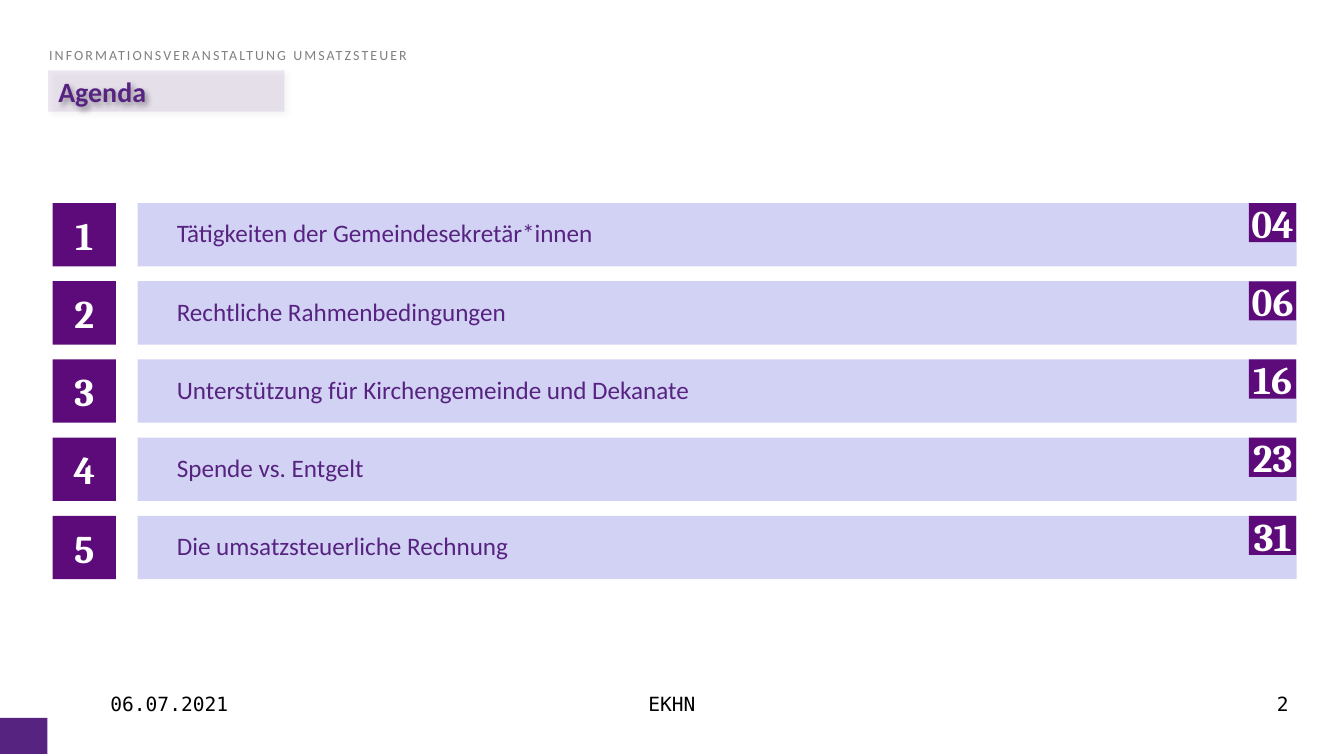
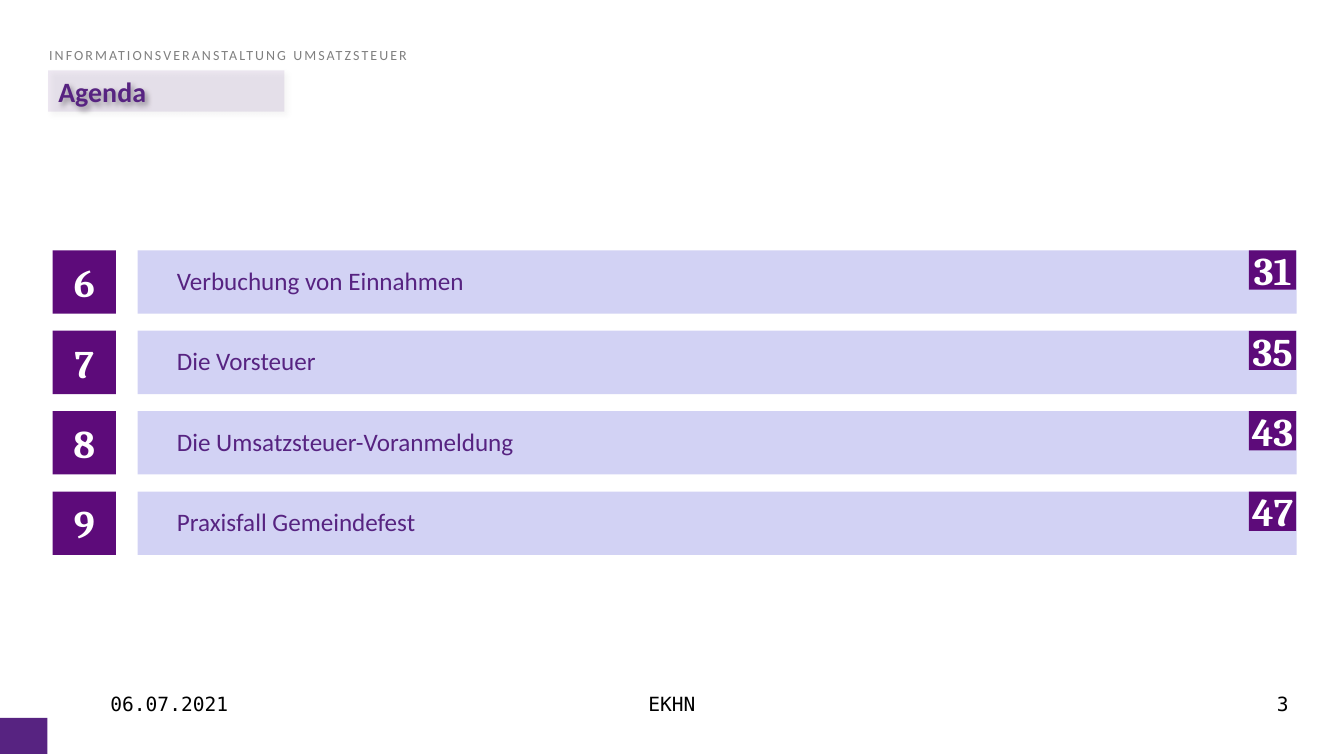
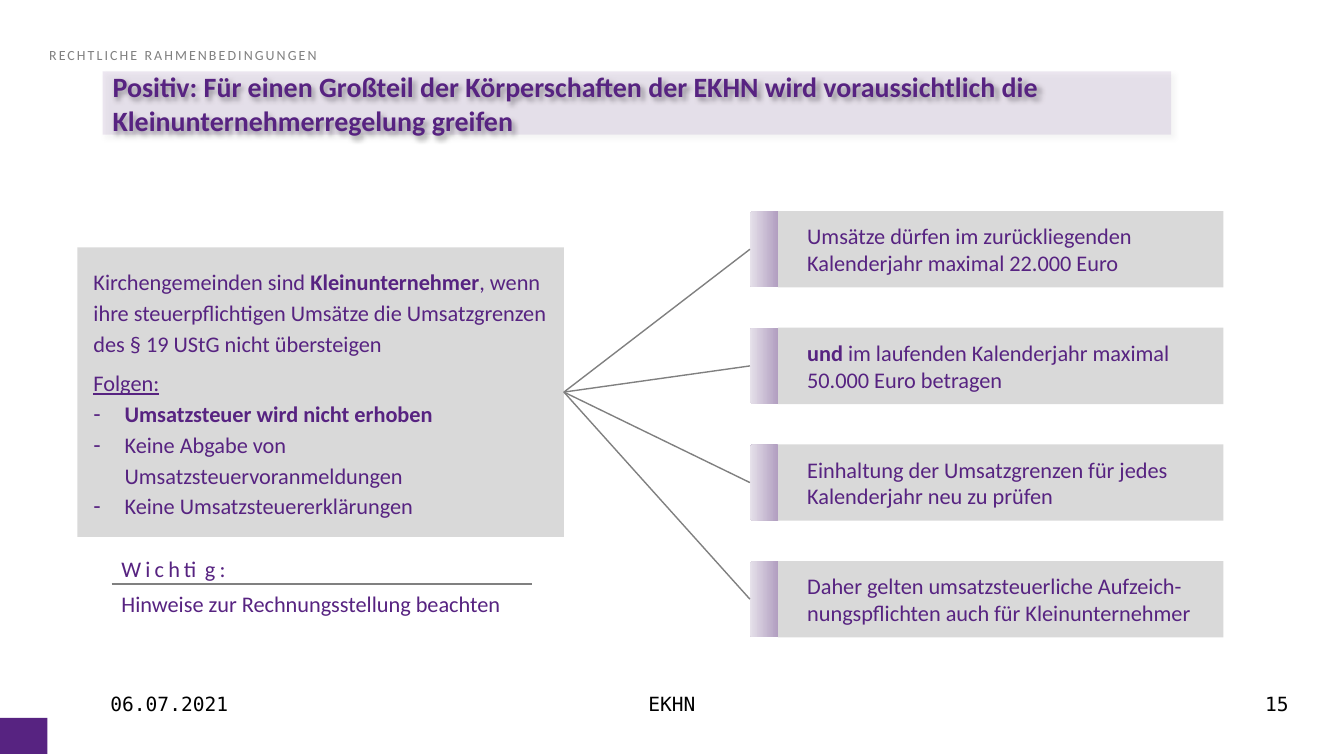
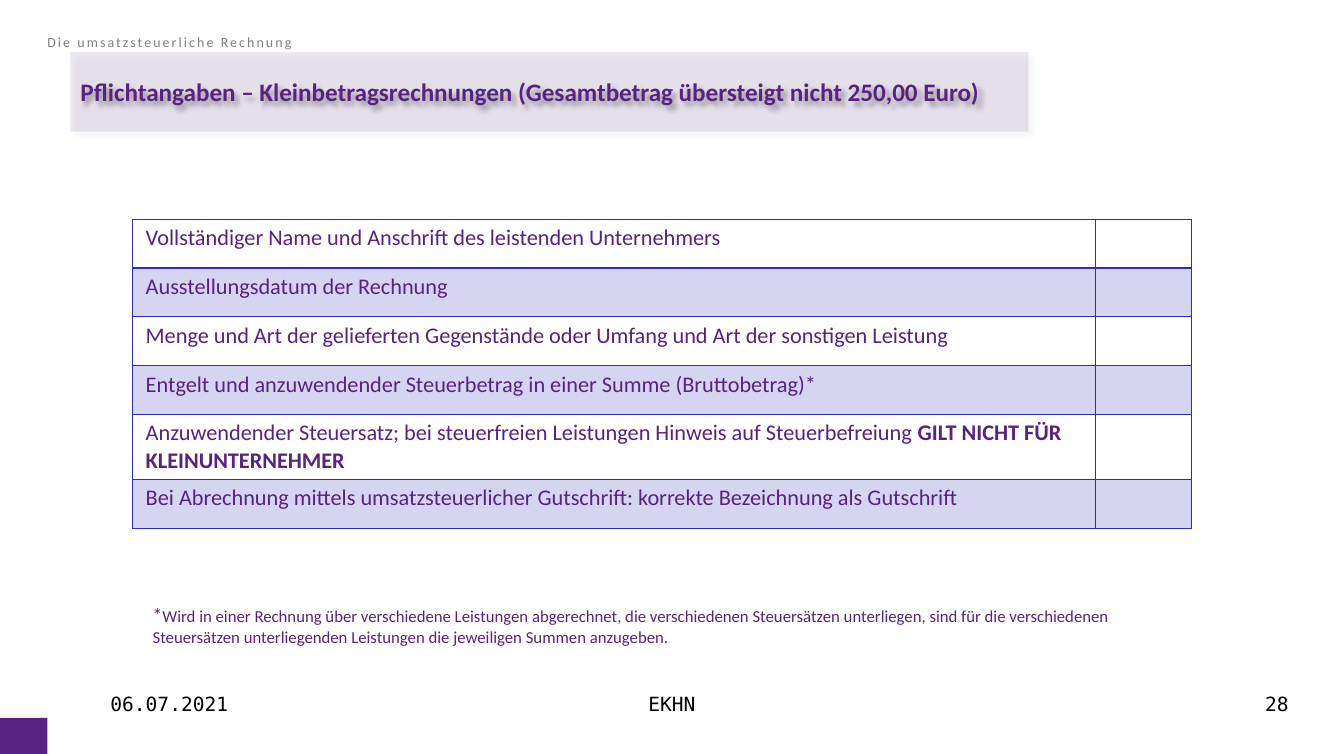
from dataclasses import dataclass

from lxml.etree import SubElement
from pptx import Presentation
from pptx.dml.color import RGBColor
from pptx.enum.shapes import MSO_CONNECTOR as Connector, MSO_SHAPE as Shape
from pptx.enum.text import MSO_ANCHOR as Anchor, MSO_AUTO_SIZE as AutoSize, PP_ALIGN as Align
from pptx.oxml.ns import qn
from pptx.util import Inches, Pt


@dataclass(frozen=True)
class Theme:
    violet: str = "572381"
    dark_violet: str = "5D0B7A"
    lilac: str = "D2D2F4"
    panel: str = "D9D9D9"
    gray: str = "808080"
    white: str = "FFFFFF"
    black: str = "000000"
    table: str = "2D2DB9"
    accent: tuple = ("AD99BD", "E6E1EA")
    font: str = "Calibri"
    number_font: str = "Cambria"
    footer_font: str = "DejaVu Sans Mono"
    number_size: int = 28
    title_size: int = 20
    item_size: int = 18
    text_size: int = 16
    footer_size: int = 14
    note_size: int = 12
    kicker_size: int = 10


theme = Theme()
presentation = Presentation()
presentation.slide_width = Inches(13.37)
presentation.slide_height = Inches(7.5)

# Grid: 100 columns by 100 rows
column = presentation.slide_width / 100
row = presentation.slide_height / 100


def place(shape, x, y, width, height, fill=None, margin=None, anchor=Anchor.MIDDLE):
    """Set a shape on the grid, flat and without outline; return its text frame."""
    shape.left, shape.top = int(x * column), int(y * row)
    shape.width, shape.height = int(width * column), int(height * row)
    if fill:
        shape.fill.solid()
        shape.fill.fore_color.rgb = RGBColor.from_string(fill)
    shape.line.fill.background()
    shape.shadow.inherit = False
    frame = shape.text_frame
    frame.word_wrap = True
    frame.auto_size = AutoSize.NONE
    frame.vertical_anchor = anchor
    if margin is not None:
        frame.margin_left = frame.margin_right = Inches(margin)
        frame.margin_top = frame.margin_bottom = Inches(margin)
    return frame


def write(paragraph, text, size, color=theme.violet, font=theme.font, bold=False,
          align=Align.LEFT, spacing=None):
    """Add one run to a paragraph; spacing is the letter spacing in points."""
    paragraph.alignment = align
    run = paragraph.add_run()
    run.text = text
    run.font.name, run.font.size, run.font.bold = font, Pt(size), bold
    run.font.color.rgb = RGBColor.from_string(color)
    if spacing:
        run.font._element.set("spc", str(int(spacing * 100)))
    return run


# Frame of every slide: kicker, title, footers
TITLE_ONLY, TITLE_AND_BODY = 5, 1
event = "INFORMATIONSVERANSTALTUNG UMSATZSTEUER"
agenda_title = ("Agenda", theme.title_size, (3.59, 9.33, 17.58, 5.47))
kicker_place = (3.66, 6.53)
headers = [
    (TITLE_ONLY, event, kicker_place, *agenda_title, "2"),
    (TITLE_ONLY, event, kicker_place, *agenda_title, "3"),
    (TITLE_AND_BODY, "RECHTLICHE RAHMENBEDINGUNGEN", kicker_place,
     "Positiv: Für einen Großteil der Körperschaften der EKHN wird voraussichtlich die "
     "Kleinunternehmerregelung greifen", theme.title_size, (7.63, 9.47, 79.51, 8.4), "15"),
    (TITLE_ONLY, "Die umsatzsteuerliche Rechnung", (3.52, 4.8),
     "Pflichtangaben – Kleinbetragsrechnungen (Gesamtbetrag übersteigt nicht 250,00 Euro)",
     theme.item_size, (5.24, 6.93, 71.28, 10.53), "28"),
]
slides = []
for layout, kicker, kicker_at, title, title_size, title_area, number in headers:
    slide = presentation.slides.add_slide(presentation.slide_layouts[layout])
    slides.append(slide)

    frame = place(slide.shapes.add_textbox(0, 0, 0, 0), *kicker_at, 92.75, 11.33,
                  margin=0, anchor=Anchor.TOP)
    frame.paragraphs[0].line_spacing = 0.85
    write(frame.paragraphs[0], kicker, theme.kicker_size, theme.gray, spacing=1.5)

    # Title on a pale, shadowed band
    band = slide.shapes.title
    frame = place(band, *title_area, fill=theme.violet)
    write(frame.paragraphs[0], title, title_size, bold=True)
    properties = band._element.spPr
    tint = properties.find(qn("a:solidFill")).find(qn("a:srgbClr"))
    SubElement(tint, qn("a:alpha"), val="10000")
    shadow = SubElement(properties.find(qn("a:effectLst")), qn("a:outerShdw"),
                        blurRad="50800", dist="38100", dir="2700000", algn="tl", rotWithShape="0")
    shadow_color = SubElement(shadow, qn("a:srgbClr"), val=theme.black)
    SubElement(shadow_color, qn("a:alpha"), val="40000")

    for text, x, width, align in [("06.07.2021", 7.48, 20.87, Align.LEFT),
                                  ("EKHN", 34.18, 31.64, Align.CENTER),
                                  (number, 71.65, 24.98, Align.RIGHT)]:
        frame = place(slide.shapes.add_textbox(0, 0, 0, 0), x, 91.07, width, 6.67,
                      anchor=Anchor.TOP)
        write(frame.paragraphs[0], text, theme.footer_size, theme.black, theme.footer_font,
              align=align)

# Corner square, moved to the master so that all slides share it
corner = slides[0].shapes.add_shape(Shape.RECTANGLE, 0, 0, 0, 0)
place(corner, 0, 95.2, 3.53, 4.8, theme.violet)
corner._element.nvSpPr.cNvPr.set("id", "20")
presentation.slide_master.shapes.element.insert(2, corner._element)

# Slides 1 and 2: agenda rows of number, bar and page
agendas = [
    (slides[0], 1, 26.93, 10.37, [
        ("Tätigkeiten der Gemeindesekretär*innen", "04"),
        ("Rechtliche Rahmenbedingungen", "06"),
        ("Unterstützung für Kirchengemeinde und Dekanate", "16"),
        ("Spende vs. Entgelt", "23"),
        ("Die umsatzsteuerliche Rechnung", "31")]),
    (slides[1], 6, 33.2, 10.67, [
        ("Verbuchung von Einnahmen", "31"),
        ("Die Vorsteuer", "35"),
        ("Die Umsatzsteuer-Voranmeldung", "43"),
        ("Praxisfall Gemeindefest", "47")]),
]
agenda_left = 3.92
for slide, first_number, first_top, step, topics in agendas:
    for index, (topic, page) in enumerate(topics):
        top = first_top + index * step
        bar = slide.shapes.add_shape(Shape.RECTANGLE, 0, 0, 0, 0)
        frame = place(bar, agenda_left + 6.32, top, 86.24, 8.4, theme.lilac, margin=0)
        frame.margin_left = Inches(0.39)
        frame.paragraphs[0].line_spacing = 0.9
        write(frame.paragraphs[0], topic, theme.item_size)
        for text, x, width, height in [(str(first_number + index), 0, 4.71, 8.4),
                                       (page, 89.01, 3.52, 5.2)]:
            box = slide.shapes.add_shape(Shape.RECTANGLE, 0, 0, 0, 0)
            frame = place(box, agenda_left + x, top, width, height, theme.dark_violet, margin=0)
            frame.paragraphs[0].space_after = Pt(6)
            write(frame.paragraphs[0], text, theme.number_size, theme.white,
                  theme.number_font, True, Align.CENTER)

# Slide 3: definition panel
slide = slides[2]
panel = slide.placeholders[1]
frame = place(panel, 5.76, 32.8, 36.2, 38.4, theme.panel, margin=0.16)
definition = [
    (False, 6, [("Kirchengemeinden sind ", False), ("Kleinunternehmer", True),
                (", wenn ihre steuerpflichtigen Umsätze die Umsatzgrenzen des § 19 UStG "
                 "nicht übersteigen", False)]),
    (False, 0, [("Folgen:", False)]),
    (True, 0, [("Umsatzsteuer wird nicht erhoben", True)]),
    (True, 0, [("Keine Abgabe von Umsatzsteuervoranmeldungen", False)]),
    (True, 0, [("Keine Umsatzsteuererklärungen", False)]),
]
for index, (bulleted, after, runs) in enumerate(definition):
    paragraph = frame.paragraphs[0] if index == 0 else frame.add_paragraph()
    indent = Inches(0.31) if bulleted else 0
    properties = paragraph._p.get_or_add_pPr()
    properties.set("marL", str(indent))
    properties.set("indent", str(-indent))
    if bulleted:
        SubElement(properties, qn("a:buChar"), char="-")
    else:
        SubElement(properties, qn("a:buNone"))
    paragraph.line_spacing = 1.15
    paragraph.space_before, paragraph.space_after = Pt(0), Pt(after)
    for text, bold in runs:
        write(paragraph, text, theme.text_size, bold=bold)
frame.paragraphs[1].runs[0].font.underline = True

# Slide 3: conditions, each joined to the panel
conditions = [
    [("Umsätze dürfen im zurückliegenden Kalenderjahr maximal 22.000 Euro", False)],
    [("und", True), (" im laufenden Kalenderjahr maximal 50.000 Euro betragen", False)],
    [("Einhaltung der Umsatzgrenzen für jedes Kalenderjahr neu zu prüfen", False)],
    [("Daher gelten umsatzsteuerliche Aufzeich-nungspflichten auch für Kleinunternehmer", False)],
]
lines = []
for index, runs in enumerate(conditions):
    top = 28 + index * 15.47
    accent = slide.shapes.add_shape(Shape.ROUNDED_RECTANGLE, 0, 0, 0, 0)
    accent.adjustments[0] = 0.12
    place(accent, 55.8, top, 2.24, 10.13)
    accent.fill.gradient()
    accent.fill.gradient_angle = 180
    for stop, color in zip(accent.fill.gradient_stops, theme.accent):
        stop.color.rgb = RGBColor.from_string(color)

    caption = slide.shapes.add_shape(Shape.RECTANGLE, 0, 0, 0, 0)
    frame = place(caption, 57.89, top, 33.13, 10.13, theme.panel)
    frame.margin_left = Inches(0.29)
    for text, bold in runs:
        write(frame.paragraphs[0], text, theme.text_size, bold=bold)

    link = slide.shapes.add_connector(Connector.STRAIGHT, 0, 0, 0, 0)
    link.begin_connect(panel, 3)
    link.end_connect(accent, 1)
    lines.append(link)

# Slide 3: underlined hint
frame = place(slide.shapes.add_textbox(0, 0, 0, 0), 8.3, 72.93, 31.64, 9.6, anchor=Anchor.TOP)
frame.paragraphs[0].space_after = Pt(6)
write(frame.paragraphs[0], "Wichtig:", theme.text_size, spacing=3)
write(frame.add_paragraph(), "Hinweise zur Rechnungsstellung beachten", theme.text_size)
rule_top = int(77.47 * row)
lines.append(slide.shapes.add_connector(Connector.STRAIGHT, int(8.3 * column), rule_top,
                                        int(39.57 * column), rule_top))
for line in lines:
    line.line.color.rgb = RGBColor.from_string(theme.gray)
    line.line.width = Pt(1)
    SubElement(line._element.spPr, qn("a:effectLst"))

# Slide 4: table of required details
slide = slides[3]
details = [
    [("Vollständiger Name und Anschrift des leistenden Unternehmers", False)],
    [("Ausstellungsdatum der Rechnung", False)],
    [("Menge und Art der gelieferten Gegenstände oder Umfang und Art der sonstigen Leistung",
      False)],
    [("Entgelt und anzuwendender Steuerbetrag in einer Summe (Bruttobetrag)*", False)],
    [("Anzuwendender Steuersatz; bei steuerfreien Leistungen Hinweis auf Steuerbefreiung ", False),
     ("GILT NICHT FÜR KLEINUNTERNEHMER", True)],
    [("Bei Abrechnung mittels umsatzsteuerlicher Gutschrift: korrekte Bezeichnung als Gutschrift",
      False)],
]
table = slide.shapes.add_table(len(details), 2, int(9.87 * column), int(29.07 * row),
                               int(78.76 * column), int(40.96 * row)).table
table.first_row = table.horz_banding = False
table.columns[0].width, table.columns[1].width = int(71.65 * column), int(7.11 * column)
for index, runs in enumerate(details):
    table.rows[index].height = int((6.48 if len(runs) == 1 else 8.56) * row)
    for text, bold in runs:
        write(table.cell(index, 0).text_frame.paragraphs[0], text, theme.text_size, bold=bold)
    for cell in table.rows[index].cells:
        cell.margin_left = cell.margin_right = Inches(0.13)
        cell.margin_top = cell.margin_bottom = Inches(0.05)
        properties = cell._tc.get_or_add_tcPr()
        # Borders come first; the line below the first row is heavier
        for side in ("lnL", "lnR", "lnT", "lnB"):
            heavy = (index, side) in ((0, "lnB"), (1, "lnT"))
            border = SubElement(properties, qn(f"a:{side}"), w=str(Pt(2 if heavy else 1)))
            SubElement(SubElement(border, qn("a:solidFill")), qn("a:srgbClr"), val=theme.table)
        if index % 2:
            cell.fill.solid()
            cell.fill.fore_color.rgb = RGBColor.from_string(theme.table)
            tint = properties.find(qn("a:solidFill")).find(qn("a:srgbClr"))
            SubElement(tint, qn("a:alpha"), val="20000")
        else:
            cell.fill.background()

# Slide 4: footnote
frame = place(slide.shapes.add_textbox(0, 0, 0, 0), 10.62, 79.33, 74.05, 7.2, anchor=Anchor.TOP)
write(frame.paragraphs[0], "*", theme.footer_size)
write(frame.paragraphs[0],
      "Wird in einer Rechnung über verschiedene Leistungen abgerechnet, die verschiedenen "
      "Steuersätzen unterliegen, sind für die verschiedenen Steuersätzen unterliegenden "
      "Leistungen die jeweiligen Summen anzugeben.", theme.note_size)

presentation.save("out.pptx")
